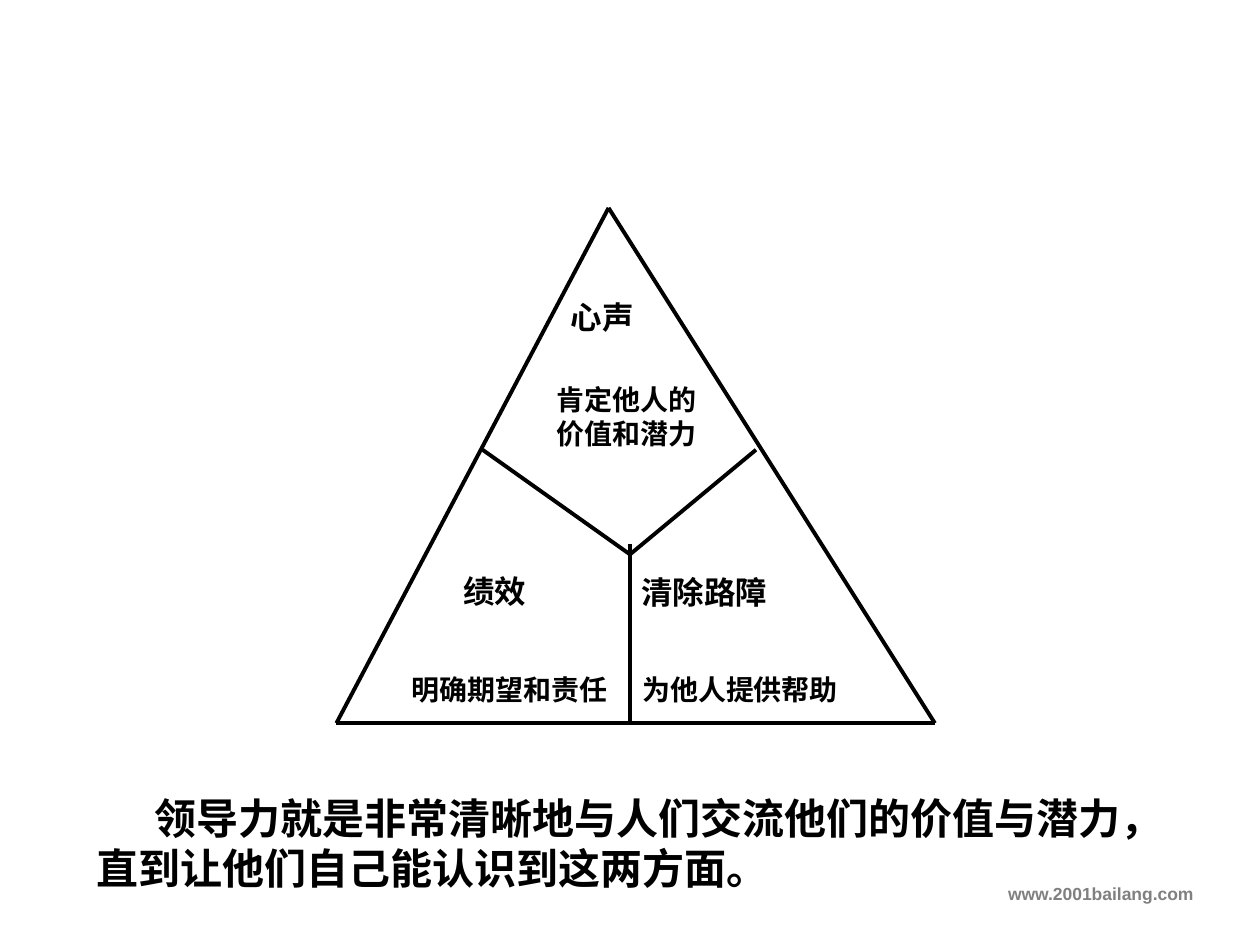
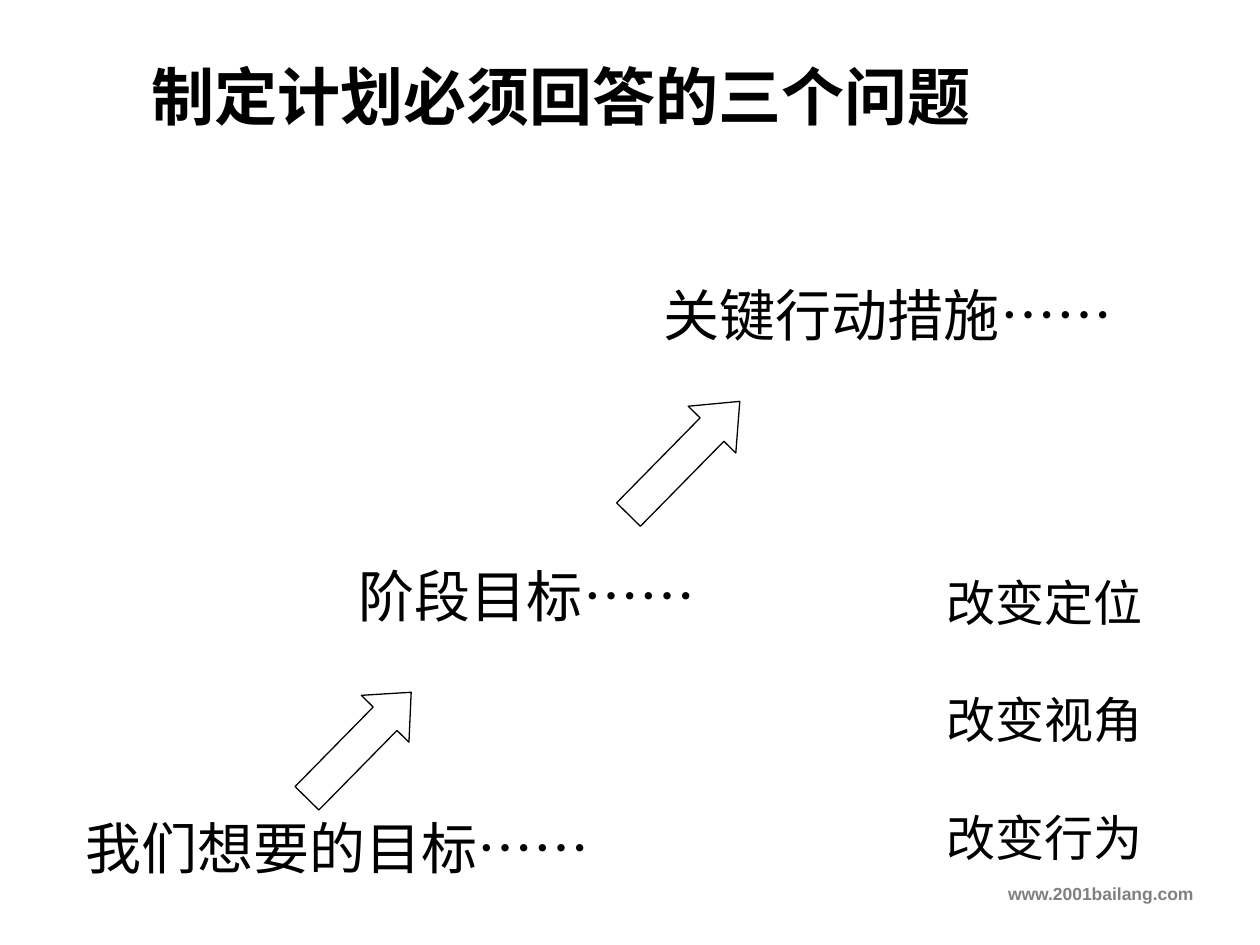
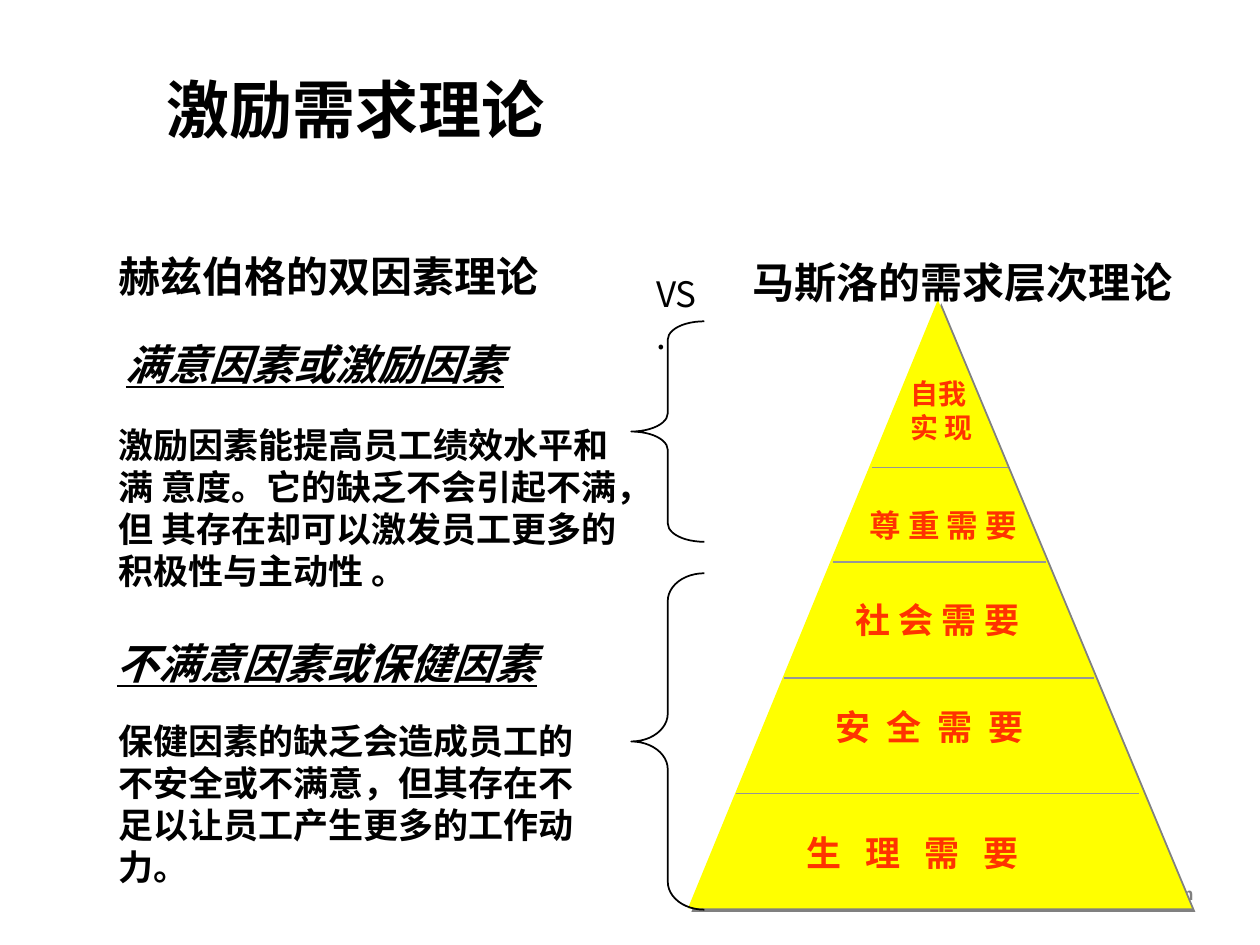
from lxml.etree import SubElement
from pptx import Presentation
from pptx.dml.color import RGBColor
from pptx.enum.shapes import MSO_CONNECTOR, MSO_SHAPE
from pptx.enum.text import MSO_ANCHOR, MSO_AUTO_SIZE, PP_ALIGN
from pptx.oxml.ns import qn
from pptx.util import Inches, Pt

BLACK = RGBColor(0x00, 0x00, 0x00)
WHITE = RGBColor(0xFF, 0xFF, 0xFF)
GREY = RGBColor(0x80, 0x80, 0x80)
DIVIDER = RGBColor(0x96, 0x96, 0x96)
YELLOW = RGBColor(0xFF, 0xFF, 0x00)
RED = RGBColor(0xFF, 0x33, 0x00)
CJK = "Noto Sans CJK SC"
ARIAL = "Arial"
TIMES = "Times New Roman"


def write(slide, text, left, top, width, height, size=20, font=CJK, color=BLACK,
          bold=True, italic=False, underline=False, align=PP_ALIGN.LEFT, indent=0,
          spacing=0, gap=0, line_spacing=None, tail="", holder=None):
    place = [Inches(length) for length in (left, top, width, height)]
    if holder is None:
        holder = slide.shapes.add_textbox(*place)
    else:
        holder.left, holder.top, holder.width, holder.height = place
    frame = holder.text_frame
    frame.word_wrap = True
    frame.auto_size = MSO_AUTO_SIZE.NONE
    frame.vertical_anchor = MSO_ANCHOR.TOP
    for number, line in enumerate(text.split("\n")):
        paragraph = frame.add_paragraph() if number else frame.paragraphs[0]
        properties = paragraph._p.get_or_add_pPr()
        properties.set("marL", "0")
        properties.set("indent", str(Inches(indent)))
        SubElement(properties, qn("a:buNone"))
        paragraph.alignment = align
        paragraph.space_before = Pt(gap if number else 0)
        if line_spacing:
            paragraph.line_spacing = line_spacing
        for words, latin in ((line, font), (tail, TIMES)):
            if not words:
                continue
            run = paragraph.add_run()
            run.text = words
            run.font.name = latin
            run.font.size = Pt(size)
            run.font.bold = bold
            run.font.italic = italic
            run.font.underline = underline
            run.font.color.rgb = color
            run_properties = run._r.get_or_add_rPr()
            SubElement(run_properties, qn("a:ea"), typeface=CJK)
            if spacing:
                run_properties.set("spc", str(round(spacing * 100)))


def draw_line(slide, start, end, color, weight):
    line = slide.shapes.add_connector(
        MSO_CONNECTOR.STRAIGHT, *[Inches(value) for value in (*start, *end)])
    line.line.color.rgb = color
    line.line.width = Pt(weight)
    SubElement(line._element.spPr, qn("a:effectLst"))


deck = Presentation()
deck.slide_width = Inches(10)
deck.slide_height = Inches(7.5)
BLANK, TITLE_AND_BODY, TITLE_ONLY = (deck.slide_layouts[i] for i in (6, 1, 5))
leadership, planning, motivation = (
    deck.slides.add_slide(layout) for layout in (BLANK, TITLE_AND_BODY, TITLE_ONLY))
for slide in deck.slides:
    write(slide, "www.2001bailang.com", 0, 6.96, 9.57, 0.35, size=10, font=ARIAL,
          color=GREY, align=PP_ALIGN.RIGHT)

apex, left_corner, right_corner = (4.83, 1.65), (2.67, 5.74), (7.42, 5.74)
center = (5, 4.4)
for start, end in ((apex, left_corner), (apex, right_corner), (left_corner, right_corner),
                   ((3.83, 3.57), center), (center, (6, 3.57)), ((5, 4.32), (5, 5.74))):
    draw_line(leadership, start, end, BLACK, 2.25)
for text, left, top, width, height, size in (
        ("心声", 4.43, 2.32, 0.98, 0.57, 18),
        ("肯定他人的价值和潜力", 4.32, 2.99, 1.43, 0.64, 16),
        ("绩效", 3.58, 4.49, 0.98, 0.57, 18),
        ("明确期望和责任", 3.17, 5.29, 2.08, 0.37, 16),
        ("清除路障", 4.99, 4.5, 1.76, 0.57, 18),
        ("为他人提供帮助", 5, 5.29, 1.83, 0.37, 16)):
    write(leadership, text, left, top, width, height, size=size, font=ARIAL)
write(leadership, "领导力就是非常清晰地与人们交流他们的价值与潜力，直到让他们自己能认识到这两方面。",
      0.67, 6.24, 8.92, 0.9, size=24, font=ARIAL, indent=0.46)

write(planning, "制定计划必须回答的三个问题", 1.1, 0.52, 7, 0.59, size=36,
      line_spacing=0.8, holder=planning.shapes.title)
write(planning, "改变定位\n改变视角\n改变行为", 7.41, 4.49, 1.9, 2.44, size=28, font=ARIAL,
      bold=False, gap=33.5, holder=planning.placeholders[1])
for goal, left, top, width, height in (
        ("我们想要的目标", 0.58, 6.41, 5.42, 1),
        ("阶段目标", 2.75, 4.41, 4, 1.26),
        ("关键行动措施", 5.17, 2.18, 4.42, 0.83)):
    write(planning, goal, left, top, width, height, size=32, bold=False, tail="……")
for left, top, width, head in ((2.26, 5.65, 1.18, 0.556), (4.8, 3.37, 1.26, 0.593)):
    step = planning.shapes.add_shape(MSO_SHAPE.RIGHT_ARROW, Inches(left), Inches(top),
                                     Inches(width), Inches(0.53))
    step.adjustments[1] = head
    step.rotation = 314.5
    step.shadow.inherit = False
    step.fill.solid()
    step.fill.fore_color.rgb = WHITE
    step.line.color.rgb = BLACK
    step.line.width = Pt(0.75)

write(motivation, "激励需求理论", 1.22, 0.19, 5.76, 1.03, size=36, line_spacing=Pt(66),
      holder=motivation.shapes.title)
pyramid = motivation.shapes.add_shape(MSO_SHAPE.ISOSCELES_TRIANGLE, Inches(5.46),
                                      Inches(2.38), Inches(4), Inches(4.83))
pyramid.adjustments[0] = 0.496
pyramid.fill.solid()
pyramid.fill.fore_color.rgb = YELLOW
pyramid.line.fill.background()
pyramid.shadow.inherit = False
shadow = SubElement(pyramid._element.spPr.find(qn("a:effectLst")), qn("a:outerShdw"),
                    dist=str(Pt(2.8)), dir="2700000", algn="ctr", rotWithShape="0")
SubElement(shadow, qn("a:srgbClr"), val=str(GREY))
for left, right, level in ((6.92, 8, 3.71), (6.61, 8.3, 4.46),
                           (6.22, 8.68, 5.38), (5.84, 9.04, 6.3)):
    draw_line(motivation, (left, level), (right, level), DIVIDER, 0.75)
for need, left, top, width, height, size, spacing, align in (
        ("自我\n实 现", 7.13, 2.94, 0.79, 0.64, 16, 0, PP_ALIGN.LEFT),
        ("尊 重 需 要", 6.69, 3.97, 1.59, 0.4, 18, 0, PP_ALIGN.CENTER),
        ("社 会 需 要", 6.69, 4.7, 1.89, 0.43, 20, 0, PP_ALIGN.LEFT),
        ("安 全 需 要", 6.53, 5.55, 2.3, 0.43, 20, 2.3, PP_ALIGN.LEFT),
        ("生 理 需 要", 6.3, 6.55, 2.58, 0.43, 20, 4.6, PP_ALIGN.LEFT)):
    write(motivation, need, left, top, width, height, size=size, color=RED,
          spacing=spacing, align=align)
for theory, left, top in (("赫兹伯格的双因素理论", 0.84, 1.94),
                          ("马斯洛的需求层次理论", 5.87, 1.99)):
    write(motivation, theory, left, top, 3.72, 0.5, size=24)
write(motivation, "VS.", 5.11, 2.11, 0.57, 0.43, bold=False)
for factor, left, top in (("满意因素或激励因素", 0.9, 2.64),
                          ("不满意因素或保健因素", 0.83, 5.01)):
    write(motivation, factor, left, top, 3.72, 0.5, size=24, italic=True, underline=True)
for effect, top, width in (
        ("激励因素能提高员工绩效水平和满 意度。它的缺乏不会引起不满，但 其存在却可以激发员工更多的积极性与主动性 。",
         3.31, 4.17),
        ("保健因素的缺乏会造成员工的 不安全或不满意，但其存在不 足以让员工产生更多的工作动力。",
         5.66, 3.9)):
    write(motivation, effect, 0.84, top, width, 1.43)
for top, height, curve in ((2.55, 1.75, 0.25), (4.55, 2.67, 0.381)):
    brace = motivation.shapes.add_shape(MSO_SHAPE.LEFT_BRACE, Inches(5.01), Inches(top),
                                        Inches(0.58), Inches(height))
    brace.adjustments[0] = curve
    brace.shadow.inherit = False
    brace.fill.background()
    brace.line.color.rgb = BLACK
    brace.line.width = Pt(1)

deck.save("out.pptx")
